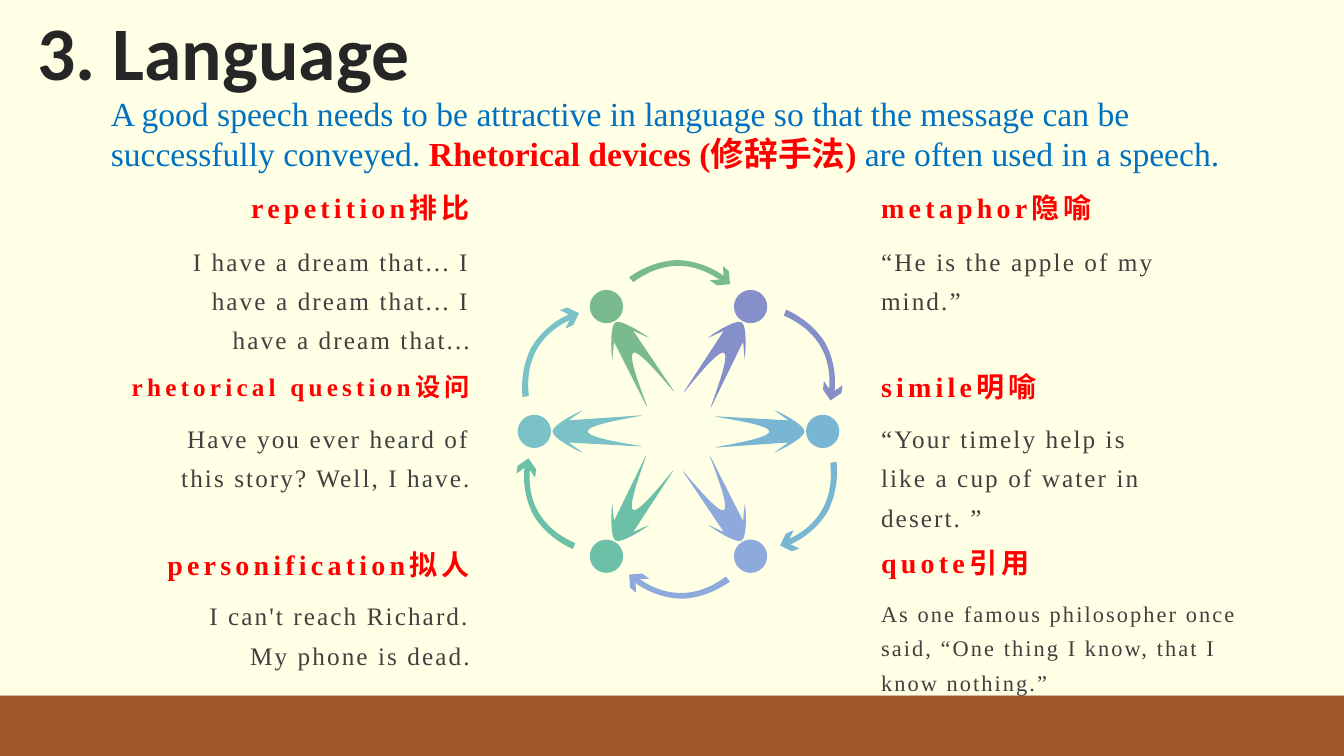
import math
from dataclasses import dataclass

import pptx
import pptx.dml.color
import pptx.enum.shapes
import pptx.enum.text
import pptx.oxml
import pptx.oxml.ns
import pptx.util

Inches = pptx.util.Inches
RGB = pptx.dml.color.RGBColor.from_string
ANCHOR = pptx.enum.text.MSO_ANCHOR
ALIGN = pptx.enum.text.PP_ALIGN
SHAPE = pptx.enum.shapes.MSO_SHAPE


@dataclass(frozen=True)
class Theme:
    paper: str = "FFFFE5"
    band: str = "A1562C"
    title: str = "262626"
    intro: str = "0070C0"
    accent: str = "FF0000"
    body: str = "404040"
    # clockwise from the upper left
    ring: tuple = ("79BB8F", "8590CA", "79B6D3", "8EAADC", "6BC0A7", "7AC2C7")
    title_font: str = "Calibri"
    font: str = "Times New Roman"
    title_size: int = 54
    intro_size: int = 24
    head_size: int = 20
    text_size: int = 18
    small_size: int = 16


T = Theme()

# Outlines relative to the ring centre: 2 numbers = line, 6 numbers = Bézier curve
BODY = [  # person facing right
    (0.37, 0.16),
    (0.29, 0.16, 0.91, 0.08, 0.9, 0),
    (0.9, -0.08, 0.28, -0.15, 0.37, -0.15),
    (1.09, -0.11),
    (0.95, -0.21),
    (0.97, -0.21, 1.25, -0.07, 1.25, 0),
    (1.25, 0.07, 0.96, 0.21, 0.95, 0.21),
    (1.09, 0.11),
]
ARC = [  # curved arrow shaft at the top
    (-0.04, -1.68),
    (0.2, -1.68, 0.38, -1.57, 0.47, -1.5),
    (0.43, -1.46),
    (0.3, -1.56, -0.04, -1.77, -0.46, -1.46),
    (-0.5, -1.51),
    (-0.33, -1.63, -0.17, -1.67, -0.04, -1.68),
]
TIP = [(0.43, -1.62), (0.44, -1.49), (0.3, -1.48),
       (0.37, -1.43), (0.5, -1.44), (0.49, -1.57)]


def paint(shape, color):
    shape.shadow.inherit = False
    shape.fill.solid()
    shape.fill.fore_color.rgb = RGB(color)
    shape.line.fill.background()


def add_preset(s, kind, box, color):
    paint(s.shapes.add_shape(kind, *map(Inches, box)), color)


def add_run(p, text, color, size, font=T.font, bold=False, spacing=0):
    r = p.add_run()
    r.text = text
    fmt = {"name": font, "size": pptx.util.Pt(size), "bold": bold}
    for key, value in fmt.items():
        setattr(r.font, key, value)
    r.font.color.rgb = RGB(color)
    if spacing:
        r.font._element.set("spc", str(int(spacing * 100)))


def add_text(s, box, anchor=ANCHOR.TOP, **para):
    tf = s.shapes.add_textbox(*map(Inches, box)).text_frame
    for key, value in {"word_wrap": True, "vertical_anchor": anchor}.items():
        setattr(tf, key, value)
    p = tf.paragraphs[0]
    for key, value in para.items():
        setattr(p, key, value)
    return p


def turn(point, center, degrees):
    x, y = point
    cos, sin = math.cos(math.radians(degrees)), math.sin(math.radians(degrees))
    return center[0] + x * cos - y * sin, center[1] + x * sin + y * cos


def add_outline(s, outline, center, degrees, color):
    pairs = [pair for seg in outline for pair in zip(seg[::2], seg[1::2])]
    points = [tuple(map(Inches, turn(pair, center, degrees))) for pair in pairs]
    fb = s.shapes.build_freeform(*points[0], scale=1.0)
    fb.add_line_segments(points[1:], close=True)
    shape = fb.convert_to_shape()
    paint(shape, color)
    # join each curve's three points into one Bézier segment
    qn = pptx.oxml.ns.qn
    lines = iter(list(shape._element.iter(qn("a:lnTo"))))
    for seg in outline[1:]:
        first = next(lines)
        if len(seg) == 6:
            first.tag = qn("a:cubicBezTo")
            for _ in range(2):
                extra = next(lines)
                first.append(extra[0])
                extra.getparent().remove(extra)


def add_ring(s, box):
    left, top, width, height = box
    center = left + width / 2, top + height / 2
    arrow_center = center[0] + 0.01, center[1] - 0.02
    head = 0.33
    for i, color in enumerate(T.ring):
        angle = 240 + 60 * i
        x, y = turn((1.43, 0), center, angle)
        add_preset(s, SHAPE.OVAL, (x - head / 2, y - head / 2, head, head), color)
        add_outline(s, BODY, center, angle, color)
        for outline in (ARC, TIP):
            add_outline(s, outline, arrow_center, 60 * i, color)


def add_header(s, box):
    left, top, width, height = box
    # title, brought in front of the backdrop
    title = s.shapes.title
    s.shapes._spTree.append(title._element)
    place = {"left": left, "top": top, "width": 3.89, "height": 1.01}
    for key, value in place.items():
        setattr(title, key, Inches(value))
    tf = title.text_frame
    fmt = {"word_wrap": True, "vertical_anchor": ANCHOR.TOP, "margin_left": 0,
           "margin_right": 0, "auto_size": pptx.enum.text.MSO_AUTO_SIZE.NONE}
    for key, value in fmt.items():
        setattr(tf, key, value)
    p = tf.paragraphs[0]
    p.alignment = ALIGN.CENTER
    add_run(p, "3. Language", T.title, T.title_size, T.title_font, True)
    # introduction
    p = add_text(s, (left + 0.73, top + 0.87, width - 0.73, height - 0.87))
    add_run(p, "A good speech needs to be attractive in language so that the message "
               "can be successfully conveyed. ", T.intro, T.intro_size)
    add_run(p, "Rhetorical devices (修辞手法)", T.accent, T.intro_size, bold=True)
    add_run(p, " are often used in a speech.", T.intro, T.intro_size)


def add_column(s, box, devices, align):
    left, top, width, height = box
    pitch = height / len(devices)
    for i, (head, head_size, head_lines, text, size, text_width) in enumerate(devices):
        y = top + i * pitch
        p = add_text(s, (left, y, width, 0.52), ANCHOR.MIDDLE,
                     alignment=align, line_spacing=head_lines)
        add_run(p, head, T.accent, head_size, bold=True, spacing=3)
        x = left + width - text_width if align == ALIGN.RIGHT else left
        p = add_text(s, (x, y + 0.52, text_width, 1.08), alignment=align, line_spacing=1.3)
        add_run(p, text, T.body, size, spacing=1.5)


# Heading, its size and line spacing, example, its size and width
LEFT = [
    ("repetition排比", T.head_size, 1.1,
     "I have a dream that... I have a dream that... I have a dream that...",
     T.text_size, 2.99),
    ("rhetorical question设问", T.text_size, 1.2,
     "Have you ever heard of this story? Well, I have.", T.text_size, 3.21),
    ("personification拟人", T.head_size, 1.2,
     "I can't reach Richard. My phone is dead.", T.text_size, 2.99),
]
RIGHT = [
    ("metaphor隐喻", T.head_size, 1.1, "“He is the apple of my mind.”", T.text_size, 2.99),
    ("simile明喻", T.head_size, 1.2,
     "“Your timely help is like a cup of water in desert. ”", T.text_size, 2.99),
    ("quote引用", T.head_size, 1.1,
     "As one famous philosopher once said, “One thing I know, that I know nothing.”",
     T.small_size, 4.06),
]


def main():
    prs = pptx.Presentation()
    prs.slide_width, prs.slide_height = Inches(13.33), Inches(7.5)
    s = prs.slides.add_slide(prs.slide_layouts[5])

    # backdrop
    add_preset(s, SHAPE.RECTANGLE, (0, 6.9, 13.33, 0.6), T.band)
    add_preset(s, SHAPE.RECTANGLE, (0, 0, 13.33, 6.9), T.paper)

    add_ring(s, (5.13, 2.68, 3.2, 3.2))
    add_column(s, (1.01, 1.78, 3.75, 5.28), LEFT, ALIGN.RIGHT)
    add_column(s, (8.64, 1.78, 3.72, 5.28), RIGHT, ALIGN.LEFT)
    add_header(s, (0.27, 0, 12.11, 1.78))
    prs.save("out.pptx")


if __name__ == "__main__":
    main()
